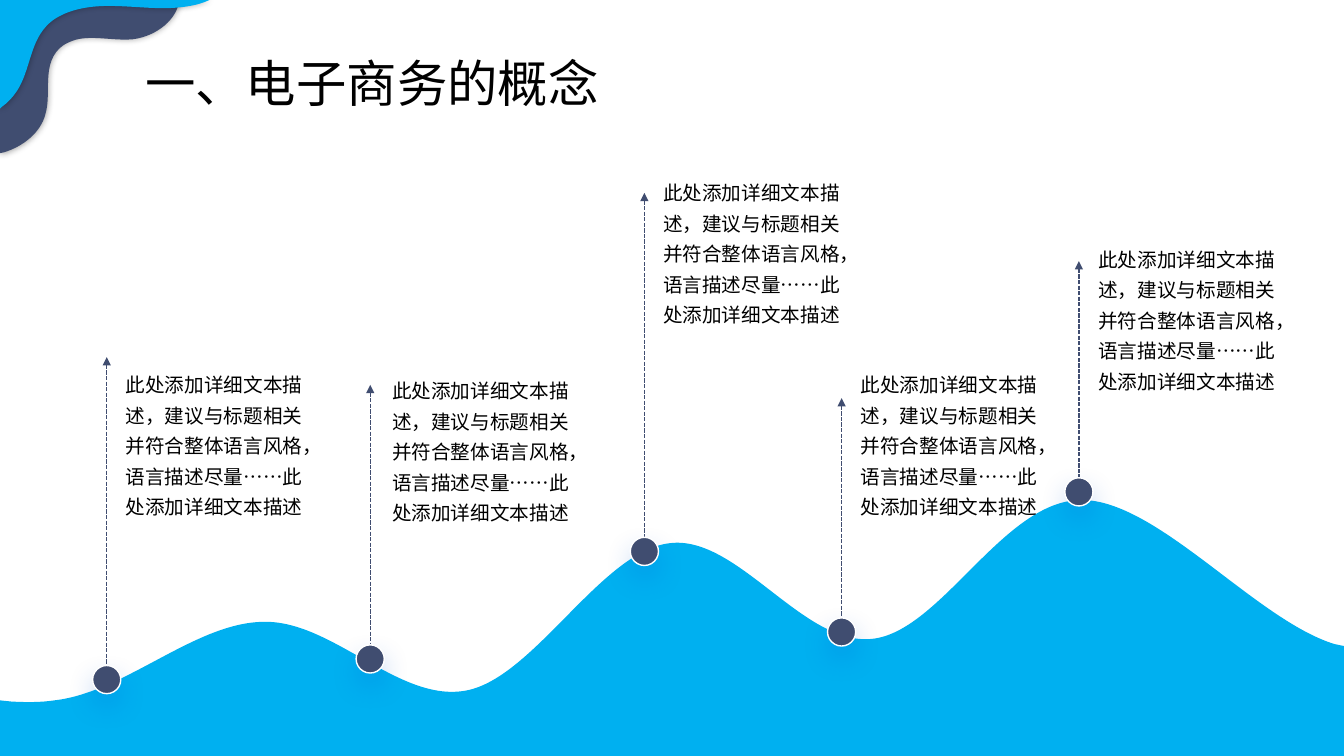
from dataclasses import dataclass

from lxml import etree
from pptx import Presentation
from pptx.dml.color import RGBColor
from pptx.enum.dml import MSO_LINE
from pptx.enum.shapes import MSO_CONNECTOR, MSO_SHAPE
from pptx.enum.text import MSO_AUTO_SIZE
from pptx.oxml.ns import qn
from pptx.util import Cm, Pt

DASH = MSO_LINE.SQUARE_DOT
LINE = MSO_CONNECTOR.STRAIGHT
OVAL = MSO_SHAPE.OVAL
GROW = MSO_AUTO_SIZE.SHAPE_TO_FIT_TEXT


@dataclass(frozen=True)
class Theme:
    """Colours, font and type sizes of the slide."""
    navy: str = "404D70"
    sky: str = "00B0F0"
    glow: str = "0C5ED3"
    ink: str = "000000"
    white: str = "FFFFFF"
    font: str = "Noto Sans CJK SC"
    head: int = 36
    body: int = 14


@dataclass(frozen=True)
class Stop:
    """One stop on the wave, measured from the box of all stops."""
    x: float
    tip: float
    foot: float
    mark: float
    side: float
    head: float


THEME = Theme()
TITLE = "一、电子商务的概念"
NOTE = "此处添加详细文本描述，建议与标题相关并符合整体语言风格，语言描述尽量……此处添加详细文本描述"

BAND = [
    (1.35, 0), (4.52, 0),
    (4.47, 0.48, 3.96, 0.91, 3.35, 0.99), (2.79, 1.04, 2.18, 0.84, 1.73, 1.07),
    (1.37, 1.22, 1.24, 1.57, 1.22, 1.91), (1.19, 2.24, 1.24, 2.57, 1.14, 2.9),
    (1.02, 3.33, 0.61, 3.68, 0.1, 3.84), (0, 3.86), (0, 2.13), (0.13, 2.06),
    (0.36, 1.91, 0.56, 1.73, 0.69, 1.52), (0.94, 1.09, 0.99, 0.58, 1.22, 0.18),
]
CAP = [
    (0, 0), (5.28, 0), (5.16, 0.05),
    (4.9, 0.15, 4.62, 0.18, 4.37, 0.2), (3.84, 0.23, 3.3, 0.15, 2.74, 0.15),
    (2.21, 0.15, 1.65, 0.25, 1.27, 0.56), (0.74, 1.02, 0.79, 1.73, 0.43, 2.29),
    (0.33, 2.44, 0.2, 2.59, 0.05, 2.69), (0, 2.74),
]
CREST = [
    (0, 5.05), (0.3, 5.08), (0.69, 5.1, 1.04, 5.1, 1.37, 5.05),
    (3.15, 4.85, 4.9, 3.1, 6.63, 3.07), (8.38, 3.02, 10.06, 5.13, 11.76, 4.8),
    (13.46, 4.47, 15.16, 1.29, 16.87, 1.09),
    (18.57, 0.86, 20.24, 3.68, 21.97, 3.5),
    (23.72, 3.33, 25.3, -0.03, 27.28, 0),
    (29.18, 0.02, 31.65, 3.02, 33.63, 3.63), (33.87, 3.68),
]
STOPS = [
    Stop(2.69, 4.73, 12.49, 12.5, 2.92, 4.83),
    Stop(9.33, 5.43, 12.19, 11.98, 9.63, 4.98),
    Stop(16.24, 0.59, 9.73, 9.27, 16.46, -0.01),
    Stop(21.21, 5.76, 11.83, 11.3, 21.44, 4.83),
    Stop(27.19, 2.31, 7.97, 7.77, 27.43, 1.67),
]


def rgb(code):
    """Turn a hex code into a colour."""
    return RGBColor.from_string(code)


def shade(shape, code, alpha, blur, dist=0, turn=0):
    """Give a shape a soft outer shadow."""
    shape.shadow.inherit = False
    glow = etree.SubElement(
        shape._element.spPr.find(qn("a:effectLst")), qn("a:outerShdw"),
        blurRad=str(Pt(blur)), dist=str(Pt(dist)), dir=str(turn * 60000),
        algn="ctr", rotWithShape="0")
    tint = etree.SubElement(glow, qn("a:srgbClr"), val=code)
    etree.SubElement(tint, qn("a:alpha"), val=str(alpha * 1000))


def bend(shape, steps):
    """Turn the sides that have control points into curves."""
    sides = list(shape._element.iter(qn("a:lnTo")))
    for side, step in zip(sides, steps[1:]):
        if len(step) == 6:
            side.tag = qn("a:cubicBezTo")
            for i in (0, 2):
                spot = etree.Element(qn("a:pt"), x=str(Cm(step[i])), y=str(Cm(step[i + 1])))
                side.insert(i // 2, spot)


def blob(slide, box, steps, code):
    """Draw a filled outline in a box."""
    left, top = box[:2]
    spots = [(Cm(left + step[-2]), Cm(top + step[-1])) for step in steps]
    pen = slide.shapes.build_freeform(*spots[0], scale=1.0)
    pen.add_line_segments(spots[1:], close=True)
    shape = pen.convert_to_shape()
    bend(shape, steps)
    shape.fill.solid()
    shape.fill.fore_color.rgb = rgb(code)
    shape.line.fill.background()
    shape.shadow.inherit = False
    return shape


def write(slide, box, text, size, space):
    """Write one paragraph in a box."""
    frame = slide.shapes.add_textbox(*map(Cm, box)).text_frame
    frame.word_wrap = True
    frame.auto_size = GROW
    para = frame.paragraphs[0]
    para.text = text
    para.line_spacing = space
    font = para.font
    font.size = Pt(size)
    font.color.rgb = rgb(THEME.ink)
    font.name = THEME.font
    etree.SubElement(font._element, qn("a:ea"), typeface=THEME.font)


def arrow(slide, x, tip, foot):
    """Draw a dashed line with its arrowhead at the tip."""
    line = slide.shapes.add_connector(LINE, Cm(x), Cm(tip), Cm(x), Cm(foot))
    line.line.color.rgb = rgb(THEME.navy)
    line.line.width = Pt(1)
    line.line.dash_style = DASH
    etree.SubElement(line.line._get_or_add_ln(), qn("a:headEnd"), type="triangle")
    etree.SubElement(line._element.spPr, qn("a:effectLst"))


def dot(slide, x, top, size=0.71):
    """Draw a round marker centred on x."""
    shape = slide.shapes.add_shape(OVAL, Cm(x - size / 2), Cm(top), Cm(size), Cm(size))
    shape.fill.solid()
    shape.fill.fore_color.rgb = rgb(THEME.navy)
    shape.line.color.rgb = rgb(THEME.white)
    shape.line.width = Pt(1)
    shade(shape, THEME.glow, 23, 20, 9, 90)


def corner(slide, box):
    """Draw the two layers of the top corner."""
    for steps, code in ((BAND, THEME.navy), (CAP, THEME.sky)):
        shade(blob(slide, box, steps, code), THEME.ink, 40, 5)


def wave(slide, box):
    """Draw the wave down to the foot of its box."""
    wide, high = box[2:]
    blob(slide, box, CREST + [(wide, high), (0, high)], THEME.sky)


def stops(slide, box):
    """Place the arrows, dots and notes along the wave."""
    left, top = box[:2]
    for stop in STOPS:
        arrow(slide, left + stop.x, top + stop.tip, top + stop.foot)
    for stop in STOPS:
        dot(slide, left + stop.x, top + stop.mark)
    for stop in STOPS:
        write(slide, (left + stop.side, top + stop.head, 5.26, 4.09), NOTE, THEME.body, 1.3)


def main():
    """Build and save the slide."""
    deck = Presentation()
    deck.slide_width, deck.slide_height = Cm(33.87), Cm(19.05)
    slide = deck.slides.add_slide(deck.slide_layouts[6])
    corner(slide, (0, 0, 5.28, 3.86))
    write(slide, (3.41, 0.97, 12.78, 1.93), TITLE, THEME.head, 1.14)
    wave(slide, (0, 12.6, 33.87, 6.45))
    stops(slide, (0, 4.27, 33.87, 13.2))
    deck.save("out.pptx")


if __name__ == "__main__":
    main()
